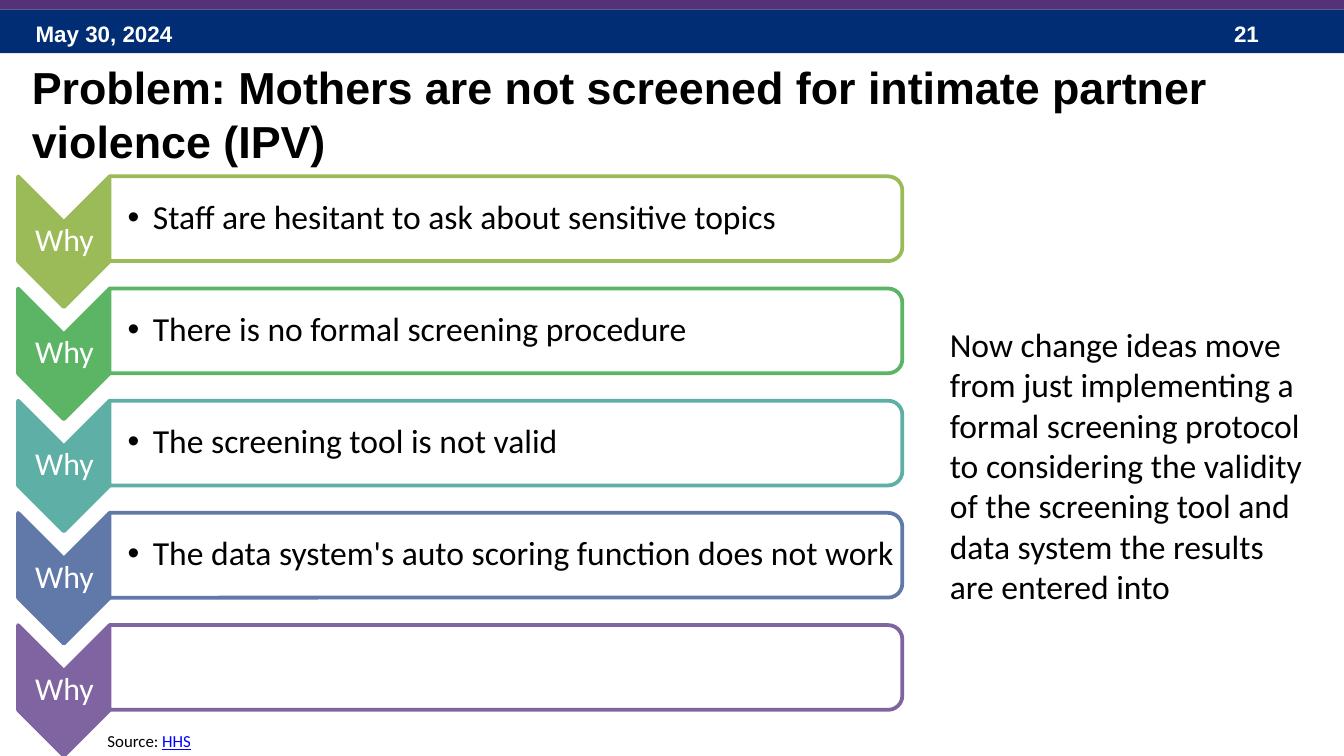
"""Build a five-whys slide on screening for intimate partner violence."""
from pptx import Presentation
from pptx.dml.color import RGBColor
from pptx.enum.shapes import MSO_SHAPE as SHAPE
from pptx.enum.text import MSO_ANCHOR as ANCHOR, PP_ALIGN as ALIGN
from pptx.oxml.ns import qn
from pptx.util import Pt
from lxml.etree import SubElement

NAVY = RGBColor(0x00, 0x2D, 0x73)
PLUM = RGBColor(0x55, 0x32, 0x78)
WHITE = RGBColor(0xFF, 0xFF, 0xFF)
BLACK = RGBColor(0x00, 0x00, 0x00)
LINK_BLUE = RGBColor(0x00, 0x00, 0xFF)
WHYS = [
    (RGBColor(0x9B, 0xBB, 0x59), "Staff are hesitant to ask about sensitive topics"),
    (RGBColor(0x5C, 0xB5, 0x65), "There is no formal screening procedure"),
    (RGBColor(0x5E, 0xAF, 0xA6), "The screening tool is not valid"),
    (RGBColor(0x61, 0x79, 0xA8), "The data system's auto scoring function does not work"),
    (RGBColor(0x80, 0x64, 0xA2), ""),
]
FIRST_TOP, PITCH = 96, 60.1
TIGHT = (1, 1, 1, 1)


def add_band(s, top, height, color):
    sp = s.shapes.add_shape(SHAPE.RECTANGLE, 0, Pt(top), Pt(720), Pt(height))
    sp.shadow.inherit = False
    sp.fill.solid()
    sp.fill.fore_color.rgb = color
    sp.line.fill.background()


def add_turned_shape(s, kind, center, size, fill, line):
    (cx, cy), (w, h) = center, size
    sp = s.shapes.add_shape(kind, Pt(cx - w / 2), Pt(cy - h / 2), Pt(w), Pt(h))
    sp.rotation = 90
    sp.shadow.inherit = False
    sp.fill.solid()
    sp.fill.fore_color.rgb = fill
    sp.line.color.rgb = line
    sp.line.width = Pt(2)
    return sp


def add_text(s, box, text, size, font="Calibri", color=BLACK, bold=False,
             insets=(7.2, 3.6, 7.2, 3.6), anchor=ANCHOR.TOP):
    tf = s.shapes.add_textbox(*map(Pt, box)).text_frame
    tf.word_wrap = True
    tf.vertical_anchor = anchor
    tf.margin_left, tf.margin_top, tf.margin_right, tf.margin_bottom = map(Pt, insets)
    p = tf.paragraphs[0]
    p.text = text
    for r in p.runs:
        r.font.name, r.font.size, r.font.bold = font, Pt(size), bold
        r.font.color.rgb = color
    return p


def add_bullet(p, indent):
    pPr = p._p.get_or_add_pPr()
    pPr.set("marL", str(Pt(indent)))
    pPr.set("indent", str(Pt(-indent)))
    SubElement(pPr, qn("a:buFont"), typeface="Arial")
    SubElement(pPr, qn("a:buChar"), char="•")


def add_why(s, top, color, answer):
    add_turned_shape(s, SHAPE.CHEVRON, (34.2, top + 33.5), (70, 49), color, color)
    p = add_text(s, (10, top + 22.8, 49, 21), "Why", 17, color=WHITE,
                 insets=TIGHT, anchor=ANCHOR.MIDDLE)
    p.alignment = ALIGN.CENTER
    p.line_spacing = 0.9
    add_turned_shape(s, SHAPE.ROUND_2_SAME_RECTANGLE, (271, top + 21.2),
                     (45.4, 424.8), WHITE, color)
    if answer:
        p = add_text(s, (58.4, top + 0.6, 423, 41), answer, 18,
                     insets=(10, 1, 1, 1), anchor=ANCHOR.MIDDLE)
        p.line_spacing = 0.9
        add_bullet(p, 13.5)


def add_source(s):
    p = add_text(s, (52.6, 388.8, 96.5, 16.5), "Source: ", 9, insets=(5, 2.9, 5, 2.9))
    r = p.add_run()
    r.text = "HHS"
    r.font.name, r.font.size, r.font.underline = "Calibri", Pt(9), True
    r.font.color.rgb = LINK_BLUE


def main():
    prs = Presentation()
    prs.slide_width, prs.slide_height = Pt(720), Pt(405)
    s = prs.slides.add_slide(prs.slide_layouts[6])
    add_band(s, 5, 23.5, NAVY)
    add_text(s, (12, 7.2, 168, 21.6), "May 30, 2024", 12, "Arial", WHITE, True)
    add_text(s, (654, 7.2, 54, 21.6), "21", 12, "Arial", WHITE, True)
    add_band(s, -1.5, 6.5, PLUM)
    add_text(s, (10, 28.4, 684, 66),
             "Problem: Mothers are not screened for intimate partner violence (IPV)",
             24, "Arial", bold=True)
    for i, (color, answer) in enumerate(WHYS):
        add_why(s, FIRST_TOP + i * PITCH, color, answer)
    add_text(s, (501.8, 170, 208.8, 160),
             "Now change ideas move from just implementing a formal screening protocol "
             "to considering the validity of the screening tool and data system the "
             "results are entered into", 18)
    add_source(s)
    prs.save("out.pptx")


if __name__ == "__main__":
    main()
